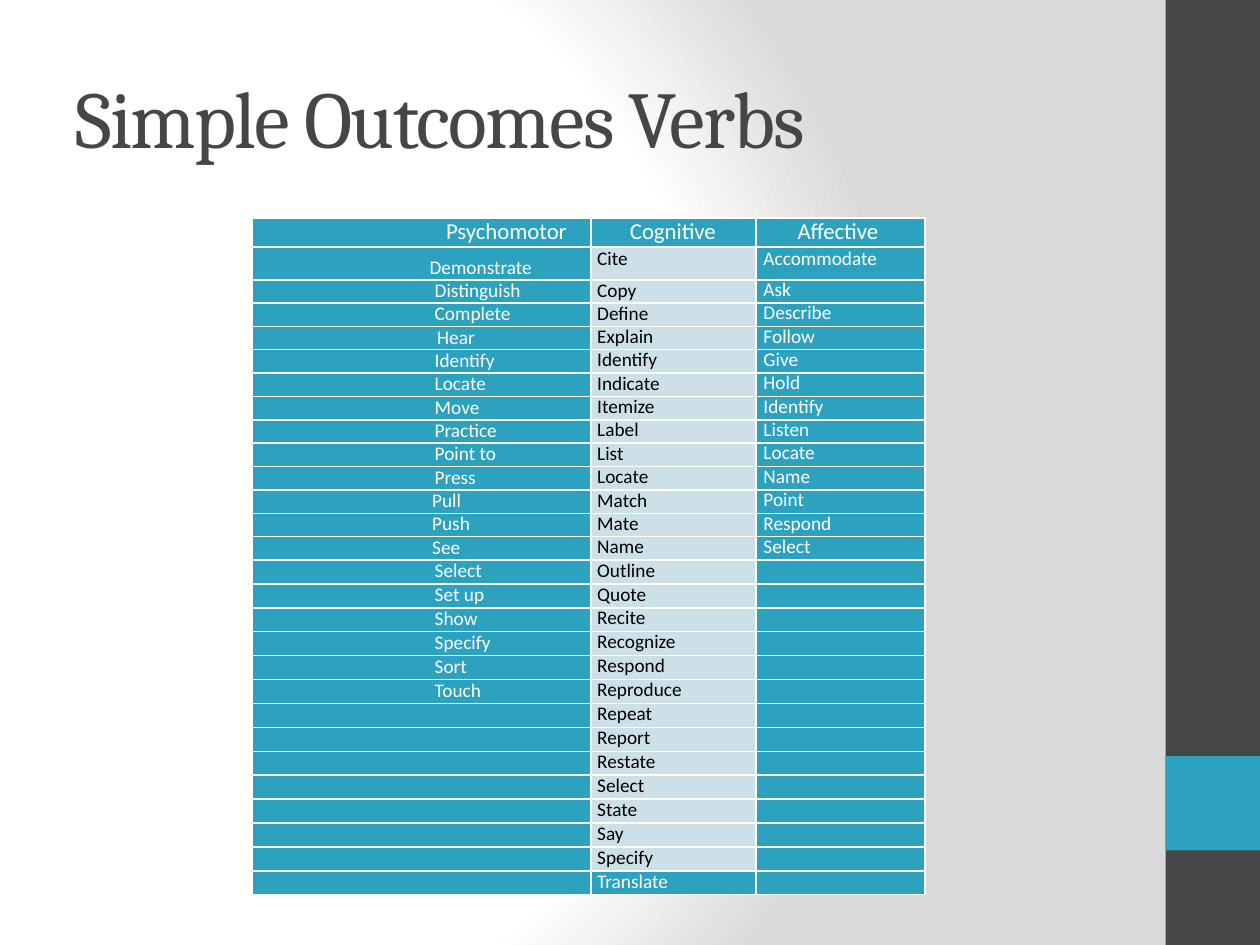
from itertools import zip_longest

from lxml.etree import SubElement
from pptx import Presentation
from pptx.dml.color import RGBColor
from pptx.enum.shapes import MSO_SHAPE as Shape
from pptx.enum.text import MSO_ANCHOR as Anchor, PP_ALIGN as Align
from pptx.oxml import parse_xml
from pptx.oxml.ns import nsdecls, qn
from pptx.util import Inches, Pt

DARK = RGBColor(0x46, 0x46, 0x46)
TEAL = RGBColor(0x2D, 0xA2, 0xBF)
PALE = RGBColor(0xCD, 0xE0, 0xE8)
WHITE = RGBColor(0xFF, 0xFF, 0xFF)
GRAY = RGBColor(0xDA, 0xDA, 0xDA)
BLACK = RGBColor(0, 0, 0)

HEADS = [("Psychomotor", 1.54), ("Cognitive", 0.31), ("Affective", 0.33)]
MOTOR = ["Demonstrate", "Distinguish", "Complete", "Hear", "Identify",
         "Locate", "Move", "Practice", "Point to", "Press", "Pull", "Push",
         "See", "Select", "Set up", "Show", "Specify", "Sort", "Touch"]
THINK = ["Cite", "Copy", "Define", "Explain", "Identify", "Indicate",
         "Itemize", "Label", "List", "Locate", "Match", "Mate", "Name",
         "Outline", "Quote", "Recite", "Recognize", "Respond", "Reproduce",
         "Repeat", "Report", "Restate", "Select", "State", "Say", "Specify",
         "Translate"]
FEEL = ["Accommodate", "Ask", "Describe", "Follow", "Give", "Hold",
        "Identify", "Listen", "Locate", "Name", "Point", "Respond", "Select"]

WIDTHS = [2.69, 1.31, 1.34]
HEIGHTS = [0.23, 0.26, 0.18] + [2.04 / 11] * 11 + [0.19] * 14
INDENTS = [1.45, 0.05, 0.06]
SHIFTS = {"Demonstrate": 1.41, "Hear": 1.47, "Pull": 1.43, "Push": 1.43,
          "See": 1.43}
# Paragraph formats by column: first verb row, then the rows below it
FIRST = [{"line_spacing": Pt(18.9)}, {"space_before": Pt(3.7)},
         {"space_before": Pt(3.2)}]
REST = [{"line_spacing": Pt(size)} for size in (13.1, 12.8, 12.6)]


def style(item, form):
    for name, value in form.items():
        setattr(item, name, value)


def set_font(font, color, **form):
    style(font, form)
    font.color.rgb = color


def paint_back(slide):
    slide.background.fill.solid()
    stops = "".join(
        f'<a:gs pos="{pos}000"><a:srgbClr val="{color}"/></a:gs>'
        for pos, color in ((0, WHITE), (75, WHITE), (100, GRAY)))
    grad = parse_xml(
        f'<a:gradFill {nsdecls("a")} rotWithShape="1"><a:gsLst>{stops}</a:gsLst>'
        '<a:path path="circle"><a:fillToRect l="20000" t="50000" '
        'r="100000" b="50000"/></a:path></a:gradFill>')
    props = next(slide.element.iter(qn("p:bgPr")))
    props.replace(props[0], grad)


def add_bar(slide, top, height, color):
    bar = slide.shapes.add_shape(
        Shape.RECTANGLE, Inches(9.25), Inches(top), Inches(0.75), Inches(height))
    bar.shadow.inherit = False
    bar.fill.solid()
    bar.fill.fore_color.rgb = color
    bar.line.fill.background()


def set_title(slide, text):
    title = slide.shapes.title
    style(title, {"left": Inches(0.5), "top": Inches(0.3),
                  "width": Inches(8.33), "height": Inches(1.25)})
    title.text_frame.vertical_anchor = Anchor.MIDDLE
    par = title.text_frame.paragraphs[0]
    par.alignment = Align.LEFT
    run = par.add_run()
    run.text = text
    set_font(run.font, DARK, size=Pt(46), name="Cambria")
    run.font._element.set("spc", "-100")


def add_rules(cell):
    props = cell._tc.get_or_add_tcPr()
    for side in ("lnL", "lnR", "lnT", "lnB"):
        line = SubElement(props, qn(f"a:{side}"), w=str(Pt(1)))
        fill = SubElement(line, qn("a:solidFill"))
        SubElement(fill, qn("a:srgbClr"), val=str(WHITE))


def fill_cell(cell, text, back, color, size, indent, form):
    add_rules(cell)
    cell.fill.solid()
    cell.fill.fore_color.rgb = back
    style(cell, dict.fromkeys(
        ("margin_left", "margin_right", "margin_top", "margin_bottom"), 0))
    par = cell.text_frame.paragraphs[0]
    style(par, form)
    if not text:
        # Keep the blank line as small as the verbs
        SubElement(par._p, qn("a:endParaRPr"), sz=str(size * 100))
        return
    props = par._p.get_or_add_pPr()
    props.set("marL", str(Inches(indent)))
    props.set("indent", "0")
    run = par.add_run()
    run.text = text
    set_font(run.font, color, size=Pt(size), name="Calibri")


def add_verbs(slide):
    table = slide.shapes.add_table(
        len(HEIGHTS), len(WIDTHS), Inches(2), Inches(1.73),
        Inches(sum(WIDTHS)), Inches(sum(HEIGHTS))).table
    style(table, {"first_row": True, "horz_banding": False})
    for col, width in zip(table.columns, WIDTHS):
        col.width = Inches(width)
    for row, height in zip(table.rows, HEIGHTS):
        row.height = Inches(height)

    # Header row
    for col, (text, indent) in enumerate(HEADS):
        fill_cell(table.cell(0, col), text, TEAL, WHITE, 13, indent,
                  {"space_before": Pt(2.5)})

    # Verb rows: the middle column is pale, except in the last row
    for row, verbs in enumerate(zip_longest(MOTOR, THINK, FEEL), 1):
        forms = FIRST if row == 1 else REST
        for col, verb in enumerate(verbs):
            pale = col == 1 and row < len(THINK)
            fill_cell(table.cell(row, col), verb, PALE if pale else TEAL,
                      BLACK if pale else WHITE, 11,
                      SHIFTS.get(verb, INDENTS[col]), forms[col])


def main():
    deck = Presentation()
    style(deck, {"slide_width": Inches(10), "slide_height": Inches(7.5)})
    slide = deck.slides.add_slide(deck.slide_layouts[5])
    paint_back(slide)
    add_bar(slide, 0, 7.5, DARK)
    add_bar(slide, 6, 0.75, TEAL)
    set_title(slide, "Simple Outcomes Verbs")
    add_verbs(slide)
    deck.save("out.pptx")


if __name__ == "__main__":
    main()
